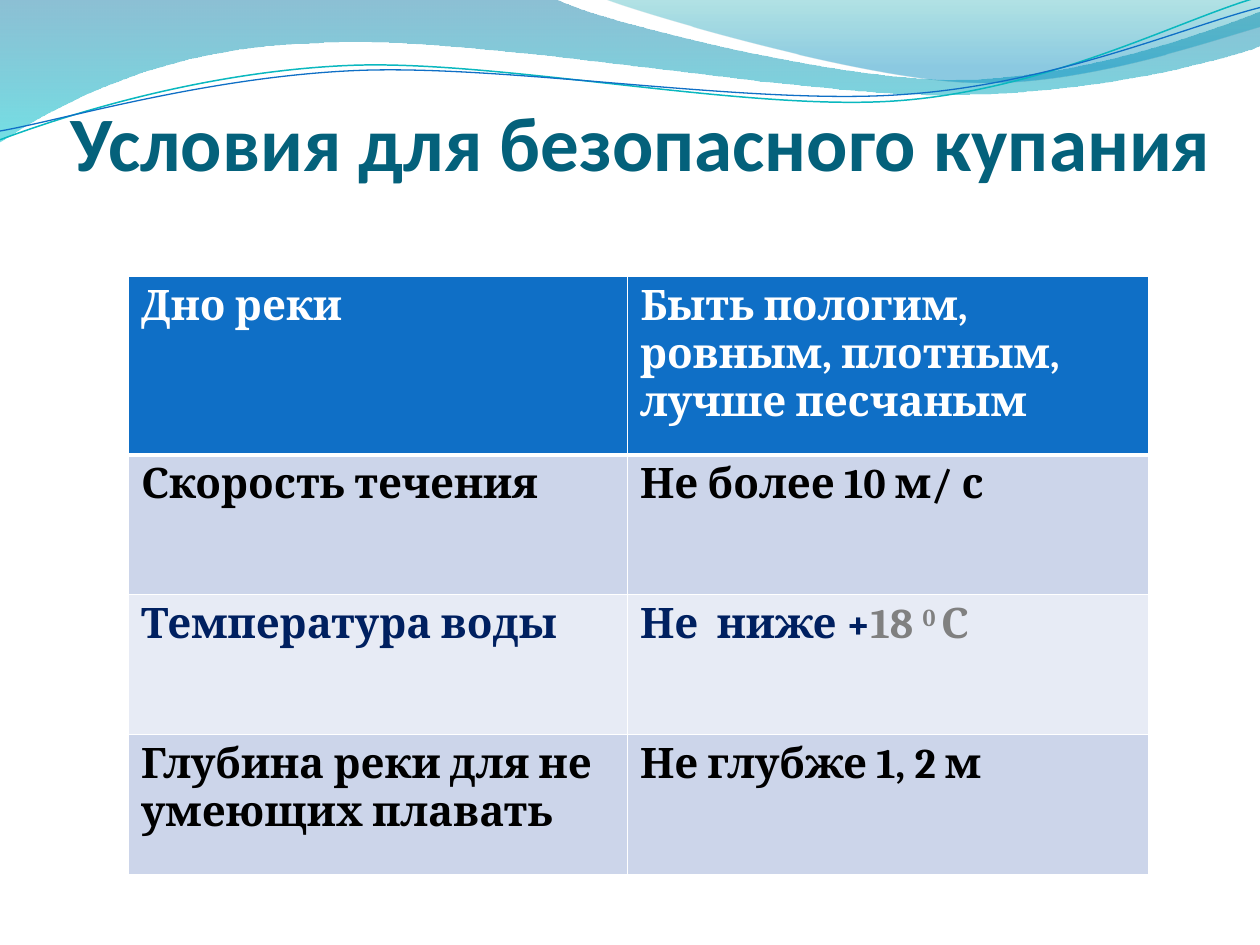
"""Builds a slide with a table of conditions for safe bathing under a wave header."""
from lxml import etree
from pptx import Presentation
from pptx import util as u
from pptx.dml.color import RGBColor
from pptx.enum import text
from pptx.oxml import ns


def paint(hex_code):
    return RGBColor.from_string(hex_code)


def write(para, words, color, **formats):
    span = para.add_run()
    span.text = words
    span.font.color.rgb = paint(color)
    for name, value in formats.items():
        setattr(span.font, name, value)
    return span


deck = Presentation()
deck.slide_width, deck.slide_height = u.Inches(10), u.Inches(7.5)
page = deck.slides.add_slide(deck.slide_layouts[6])

waves = [
    {"path": [(0, 0), (4.4, -0.01), (4.76, 0.17, 6.64, 0.63, 7.58, 0.63),
              (8.53, 0.63, 9.58, 0.26, 10, 0.09), (10.01, 0.36),
              (9.83, 0.44, 8.7, 0.76, 7.46, 0.75), (6.22, 0.75, 3.82, 0.28, 2.57, 0.34),
              (1.29, 0.36, 0.46, 0.83, -0.01, 1.13)],
     "stops": [(0, "0074A1", 45), (1, "00C6CF", 55)]},
    {"path": [(4.79, -0.01), (5.09, 0.11, 6.82, 0.62, 7.69, 0.65),
              (8.56, 0.69, 9.61, 0.32, 10, 0.21), (10, 0)],
     "stops": [(0, "00A1A9", 30), (0.8, "008BBF", 45)]},
    {"path": [(0, 1.11), (0.48, 0.93, 1.58, 0.57, 2.77, 0.52),
              (3.95, 0.47, 5.93, 0.89, 7.13, 0.8), (8.33, 0.71, 9.38, 0.15, 9.98, -0.02)],
     "line": ("0AB8BF", 0.85)},
    {"path": [(0, 1.04), (0.47, 0.96, 1.64, 0.61, 2.83, 0.56),
              (4.03, 0.51, 5.97, 0.84, 7.17, 0.75), (8.36, 0.67, 9.41, 0.21, 10, 0.06)],
     "line": ("0F6FC6", 0.75)},
]
for wave in waves:
    corners = [(u.Inches(piece[-2]), u.Inches(piece[-1])) for piece in wave["path"]]
    outline = page.shapes.build_freeform(*corners[0])
    outline.add_line_segments(corners[1:], close="stops" in wave)
    shape = outline.convert_to_shape()
    shape.shadow.inherit = False
    segments = list(shape._element.spPr.iter(ns.qn("a:lnTo")))
    for segment, piece in zip(segments, wave["path"][1:]):
        if len(piece) == 6:
            curve = etree.Element(ns.qn("a:cubicBezTo"))
            for x, y in zip(piece[::2], piece[1::2]):
                etree.SubElement(curve, ns.qn("a:pt"), x=str(u.Inches(x) - shape.left),
                                 y=str(u.Inches(y) - shape.top))
            segment.getparent().replace(segment, curve)
    if "stops" in wave:
        shape.line.fill.background()
        shape.fill.gradient()
        shape.fill.gradient_angle = 270
        for stop, (place, color, opacity) in zip(shape.fill.gradient_stops, wave["stops"]):
            stop.position = place
            stop.color.rgb = paint(color)
        for tint, (place, color, opacity) in zip(
                shape._element.spPr.iter(ns.qn("a:srgbClr")), wave["stops"]):
            etree.SubElement(tint, ns.qn("a:alpha"), val=str(opacity * 1000))
    else:
        color, width = wave["line"]
        shape.fill.background()
        shape.line.color.rgb = paint(color)
        shape.line.width = u.Pt(width)

box = page.shapes.add_textbox(u.Inches(0.55), u.Inches(0.23), u.Inches(9.08), u.Inches(1.25))
frame_formats = {"word_wrap": True, "vertical_anchor": text.MSO_ANCHOR.BOTTOM,
                 "margin_left": 0, "margin_right": 0, "margin_bottom": 0}
for name, value in frame_formats.items():
    setattr(box.text_frame, name, value)
title = box.text_frame.paragraphs[0]
title.alignment = text.PP_ALIGN.CENTER
write(title, "Условия для безопасного купания", "04617B",
      name="Calibri", size=u.Pt(44), bold=True)

rows = [
    (1.42, "0F6FC6", "FFFFFF", "Дно реки", "Быть пологим, ровным, плотным, лучше песчаным"),
    (1.11, "CCD5EA", "000000", "Скорость течения", "Не более 10 м/ с"),
    (1.11, "E7EBF5", "002060", "Температура воды", "Не  ниже +"),
    (1.11, "CCD5EA", "000000", "Глубина реки для не умеющих плавать", "Не глубже 1, 2 м"),
]
body = {"name": "Cambria", "size": u.Pt(24), "bold": True}
table = page.shapes.add_table(len(rows), 2, u.Inches(1.02), u.Inches(2.19),
                              u.Inches(8.1), u.Inches(4.76)).table
for column, width in zip(table.columns, (3.96, 4.14)):
    column.width = u.Inches(width)
for index, (height, fill, color, *labels) in enumerate(rows):
    table.rows[index].height = u.Inches(height)
    for cell, label in zip(table.rows[index].cells, labels):
        borders = cell._tc.get_or_add_tcPr()
        for side in "LRTB":
            width = 3 if (index, side) == (0, "B") else 1
            edge = etree.SubElement(borders, ns.qn(f"a:ln{side}"), w=str(u.Pt(width)))
            ink = etree.SubElement(edge, ns.qn("a:solidFill"))
            etree.SubElement(ink, ns.qn("a:srgbClr"), val="FFFFFF")
        cell.fill.solid()
        cell.fill.fore_color.rgb = paint(fill)
        write(cell.text_frame.paragraphs[0], label, color, **body)

warmth = table.cell(2, 1).text_frame.paragraphs[0]
for words, baseline in (("18 ", 0), ("0 ", 30000), ("С", 0)):
    span = write(warmth, words, "808080", **body)
    span.font._element.set("baseline", str(baseline))

deck.save("out.pptx")
